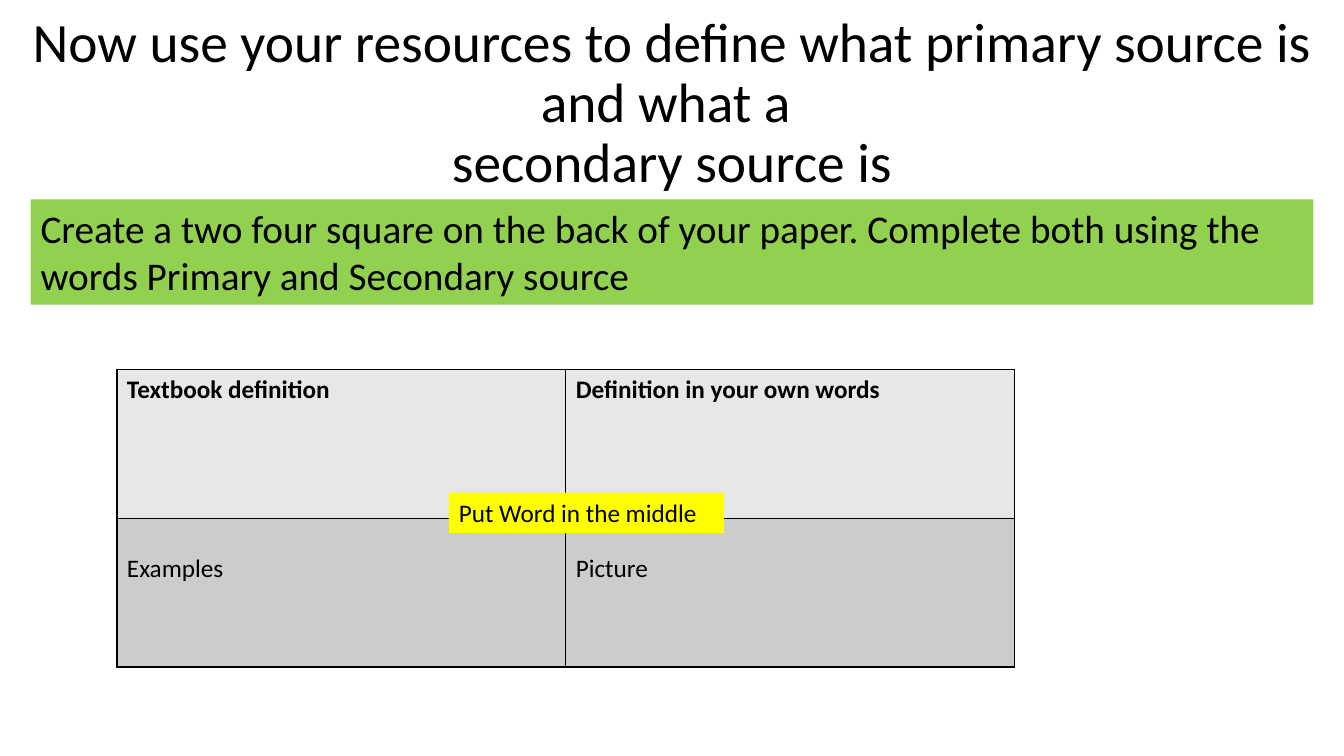
from dataclasses import dataclass

from lxml import etree
from pptx import Presentation
from pptx.dml.color import RGBColor
from pptx.enum.text import MSO_ANCHOR, PP_ALIGN
from pptx.oxml.ns import qn
from pptx.slide import Slide
from pptx.table import _Cell
from pptx.text.text import TextFrame
from pptx.util import Pt

LEFT, MID = PP_ALIGN.LEFT, PP_ALIGN.CENTER
TOP, BASE = MSO_ANCHOR.TOP, MSO_ANCHOR.BOTTOM
FONT = "Calibri"
BLACK = "000000"
SIDES = ("a:lnL", "a:lnR", "a:lnT", "a:lnB")
COL, ROW = 320.6, 106.3


@dataclass
class Box:
    text: str
    left: float
    top: float
    width: float
    height: float
    size: float
    fill: str = ""
    align: PP_ALIGN = LEFT
    anchor: MSO_ANCHOR = TOP
    space: float = 1.0


@dataclass
class Band:
    words: tuple[str, str]
    fill: str
    bold: bool
    inset: float


TITLE = Box(
    "Now use your resources to define what primary source is and what a \vsecondary source is",
    0, 16.5, 960, 126, 39.6, align=MID, anchor=BASE, space=0.9,
)
TASK = Box(
    "Create a two four square on the back of your paper. "
    "Complete both using the words Primary and Secondary source",
    21.9, 142.5, 916.3, 75.1, 28, "92D050",
)
WORD = Box("Put Word in the middle", 320.7, 351.8, 196.3, 29.1, 18, "FFFF00")
BANDS = (
    Band(("Textbook definition", "Definition in your own words"), "E7E7E7", True, 3.6),
    Band(("Examples", "Picture"), "CCCCCC", False, 25.6),
)


def tint(code: str) -> RGBColor:
    return RGBColor.from_string(code)


def write(frame: TextFrame, text: str, *, size: float, bold: bool = False,
          align: PP_ALIGN = LEFT, space: float = 1.0) -> None:
    frame.word_wrap = True
    para = frame.paragraphs[0]
    para.text = text
    para.alignment = align
    para.line_spacing = space
    for run in para.runs:
        run.font.name = FONT
        run.font.size = Pt(size)
        run.font.bold = bold
        run.font.color.rgb = tint(BLACK)


def draw_box(slide: Slide, box: Box) -> None:
    shape = slide.shapes.add_textbox(
        Pt(box.left), Pt(box.top), Pt(box.width), Pt(box.height)
    )
    if box.fill:
        shape.fill.solid()
        shape.fill.fore_color.rgb = tint(box.fill)
    shape.text_frame.vertical_anchor = box.anchor
    write(shape.text_frame, box.text, size=box.size, align=box.align, space=box.space)


def edge(cell: _Cell) -> None:
    props = cell._tc.get_or_add_tcPr()
    for side in SIDES:
        line = etree.SubElement(props, qn(side), w=str(Pt(1)))
        fill = etree.SubElement(line, qn("a:solidFill"))
        etree.SubElement(fill, qn("a:srgbClr"), val=BLACK)


def draw_grid(slide: Slide) -> None:
    grid = slide.shapes.add_table(
        len(BANDS), 2, Pt(83.5), Pt(263.8), Pt(2 * COL), Pt(2 * ROW)
    ).table
    for col in grid.columns:
        col.width = Pt(COL)
    for r, band in enumerate(BANDS):
        grid.rows[r].height = Pt(ROW)
        for c, word in enumerate(band.words):
            cell = grid.cell(r, c)
            edge(cell)
            cell.fill.solid()
            cell.fill.fore_color.rgb = tint(band.fill)
            cell.margin_top = Pt(band.inset)
            write(cell.text_frame, word, size=18, bold=band.bold)


def main() -> None:
    deck = Presentation()
    deck.slide_width, deck.slide_height = Pt(960), Pt(540)
    slide = deck.slides.add_slide(deck.slide_layouts[6])
    draw_box(slide, TITLE)
    draw_box(slide, TASK)
    draw_grid(slide)
    draw_box(slide, WORD)
    deck.save("out.pptx")


if __name__ == "__main__":
    main()
